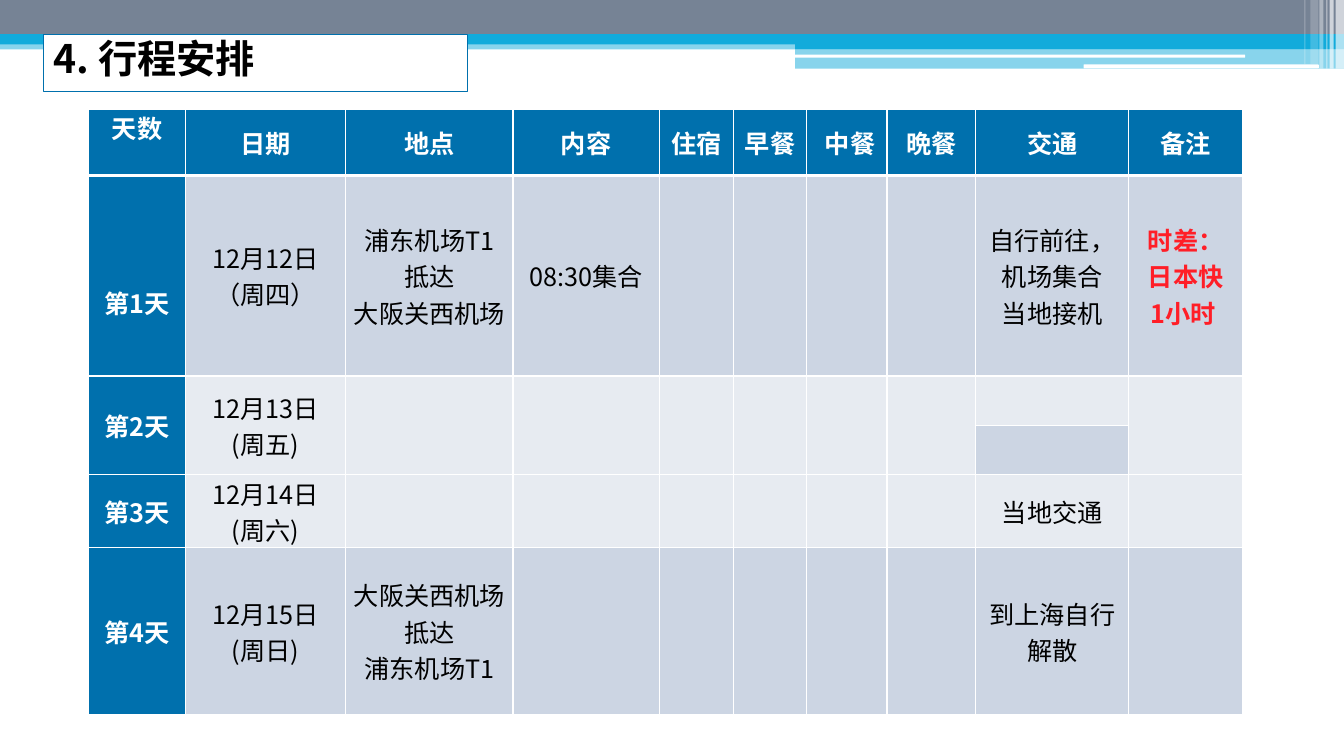
from typing import NamedTuple

from lxml.etree import SubElement
from pptx import Presentation
from pptx.dml.color import RGBColor
from pptx.enum.shapes import MSO_SHAPE
from pptx.enum.text import MSO_ANCHOR, PP_ALIGN
from pptx.oxml.ns import qn
from pptx.util import Pt

FONT = "Noto Sans CJK SC"
WHITE, BLACK, RED = "FFFFFF", "000000", "FF1E27"
BLUE, CYAN, GRAY = "0070AD", "12ABDB", "768395"
DARK_BAND, LIGHT_BAND = "CCD5E3", "E7EBF1"

COLUMNS = [69.1, 114.5, 119.5, 104.4, 53.3, 51.8, 57.6, 63.4, 109.4, 81.4]
ROWS = [47.5, 143.3, 35.3, 35.3, 52, 119.5]
ROW_FILLS = [BLUE, DARK_BAND, LIGHT_BAND, DARK_BAND, LIGHT_BAND, DARK_BAND]
LUNCH, TRANSPORT, NOTES = 6, 8, 9
SPLIT_ROW = 2  # day 2 spans two rows, except in the transport column

ITINERARY = [
    ["天数", "日期", "地点", "内容", "住宿", "早餐", "中餐", "晩餐", "交通", "备注"],
    ["第1天", "12月12日（周四）", "浦东机场T1\n抵达\n大阪关西机场", "08:30集合",
     "", "", "", "", "自行前往，机场集合\n当地接机", "时差：日本快\n1小时\u00a0"],
    ["第2天", "12月13日\n(周五)"] + [""] * 8,
    [""] * 10,
    ["第3天", "12月14日\n(周六)"] + [""] * 6 + ["当地交通", ""],
    ["第4天", "12月15日\n(周日)", "大阪关西机场\n抵达\n浦东机场T1"]
    + [""] * 5 + ["到上海自行解散", ""],
]


class Band(NamedTuple):
    left: float
    top: float
    width: float
    height: float
    color: str
    opacity: int = 100
    kind: MSO_SHAPE = MSO_SHAPE.RECTANGLE


BANDS = [
    Band(0, 28.8, 960, 6.5, CYAN, 50),
    Band(0, 0, 960, 24.5, GRAY),
    Band(0, 24.5, 960, 7.2, CYAN),
    Band(568, 28, 392, 7, CYAN),
    Band(568, 34.6, 392, 14.4, CYAN, 50),
    Band(567.4, 39, 322, 2.2, WHITE, kind=MSO_SHAPE.ROUNDED_RECTANGLE),
    Band(774, 46, 168, 2.9, WHITE, kind=MSO_SHAPE.ROUNDED_RECTANGLE),
    Band(954, 0, 6, 49, WHITE, 65),
    Band(949.7, 0, 2.9, 49, WHITE, 65),
    Band(947.5, 0, 0.7, 49, WHITE, 60),
    Band(942.5, 0, 2.9, 49, WHITE, 40),
    Band(936, 0, 5.8, 46, WHITE, 20),
    Band(931.7, 0, 0.7, 46, WHITE, 30),
]


def rgb(color: str) -> RGBColor:
    return RGBColor.from_string(color)


def add_band(s, band: Band):
    sp = s.shapes.add_shape(band.kind, Pt(band.left), Pt(band.top),
                            Pt(band.width), Pt(band.height))
    sp.shadow.inherit = False
    sp.line.fill.background()
    sp.fill.solid()
    sp.fill.fore_color.rgb = rgb(band.color)
    if band.opacity < 100:
        color = sp._element.spPr.find(qn("a:solidFill"))[0]
        SubElement(color, qn("a:alpha"), val=str(band.opacity * 1000))
    return sp


def format_text(tf, size: float, color: str, bold: bool) -> None:
    for p in tf.paragraphs:
        for r in p.runs:
            r.font.size = Pt(size)
            r.font.name = FONT
            r.font.bold = bold
            r.font.color.rgb = rgb(color)
            SubElement(r._r.get_or_add_rPr(), qn("a:ea"), typeface=FONT)


def set_borders(cell, top: float, bottom: float) -> None:
    """Draw white borders; the schema wants them ahead of the fill."""
    tc_pr = cell._tc.get_or_add_tcPr()
    sides = [("L", 1), ("R", 1), ("T", top), ("B", bottom)]
    for i, (side, width) in enumerate(sides):
        ln = SubElement(tc_pr, qn(f"a:ln{side}"), w=str(Pt(width)))
        SubElement(SubElement(ln, qn("a:solidFill")), qn("a:srgbClr"), val=WHITE)
        tc_pr.insert(i, ln)


def fill_cell(cell, row: int, col: int) -> None:
    heading = row == 0 or col == 0
    note = col == NOTES and not heading
    cell.fill.solid()
    continued = row == SPLIT_ROW + 1 and col != TRANSPORT
    band = ROW_FILLS[SPLIT_ROW if continued else row]
    cell.fill.fore_color.rgb = rgb(BLUE if heading else band)
    set_borders(cell, top=3 if row == 1 else 1, bottom=3 if row == 0 else 1)

    text = ITINERARY[row][col]
    if not text:
        return
    cell.text_frame.text = text
    cell.margin_left = cell.margin_right = Pt(5)
    cell.margin_top = cell.margin_bottom = 0
    cell.vertical_anchor = MSO_ANCHOR.MIDDLE
    if col == 0 and row < 2:
        cell.vertical_anchor = MSO_ANCHOR.TOP
        cell.margin_top = Pt(78 * row)
    for p in cell.text_frame.paragraphs:
        p.alignment = PP_ALIGN.CENTER
        if (row, col) == (0, LUNCH):
            p._p.get_or_add_pPr().set("indent", str(Pt(5)))
    color = WHITE if heading else RED if note else BLACK
    format_text(cell.text_frame, 18, color, heading or note)


def add_itinerary(s) -> None:
    table = s.shapes.add_table(len(ROWS), len(COLUMNS), Pt(63.4), Pt(77.8),
                               Pt(sum(COLUMNS)), Pt(sum(ROWS))).table
    table.horz_banding = False
    for column, width in zip(table.columns, COLUMNS):
        column.width = Pt(width)
    for row, height in zip(table.rows, ROWS):
        row.height = Pt(height)
    for row in range(len(ROWS)):
        for col in range(len(COLUMNS)):
            fill_cell(table.cell(row, col), row, col)
    for col in range(len(COLUMNS)):
        if col != TRANSPORT:
            table.cell(SPLIT_ROW, col).merge(table.cell(SPLIT_ROW + 1, col))


def add_title(s) -> None:
    sp = add_band(s, Band(31, 24.5, 303, 41, WHITE))
    sp.line.color.rgb = rgb(BLUE)
    sp.line.width = Pt(1)
    tf = sp.text_frame
    tf.word_wrap = True
    tf.margin_top = tf.margin_bottom = 0
    tf.vertical_anchor = MSO_ANCHOR.TOP
    tf.text = "4. 行程安排"
    tf.paragraphs[0].alignment = PP_ALIGN.LEFT
    format_text(tf, 28, BLACK, True)


def main() -> None:
    prs = Presentation()
    prs.slide_width, prs.slide_height = Pt(960), Pt(540)
    s = prs.slides.add_slide(prs.slide_layouts[6])
    for band in BANDS:
        add_band(s, band)
    add_itinerary(s)
    add_title(s)
    prs.save("out.pptx")


if __name__ == "__main__":
    main()
